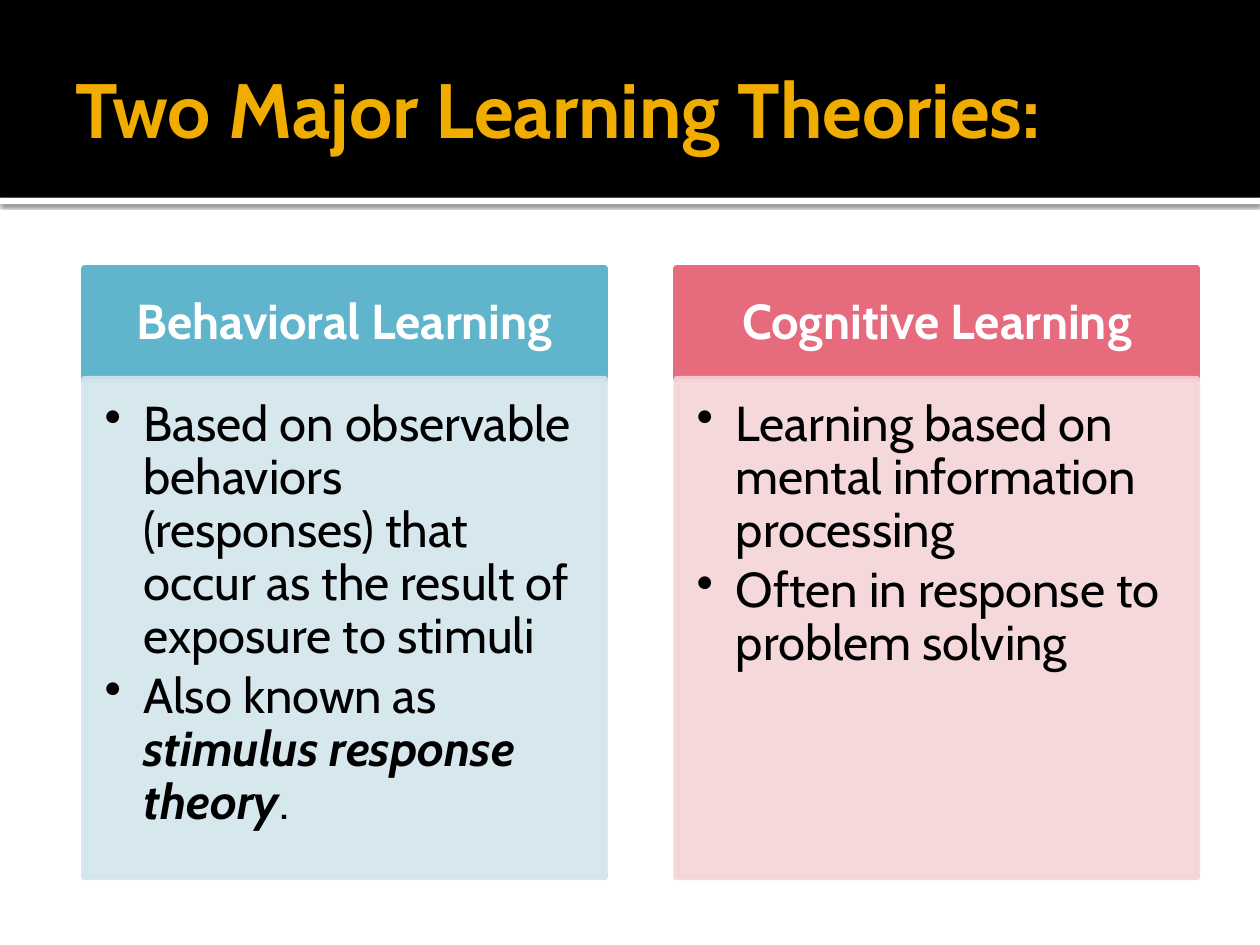
from lxml.etree import SubElement as Sub
from pptx import Presentation
from pptx.dml.color import RGBColor as RGB
from pptx.enum.shapes import MSO_SHAPE as Kind
from pptx.enum.text import MSO_ANCHOR as Anchor, PP_ALIGN as Align
from pptx.oxml.ns import qn
from pptx.util import Inches, Pt

HEAD = "Two Major Learning Theories:"
CARDS = [
    ("Behavioral Learning", "60B5CC", "D2E5EC", [
        [("Based on observable behaviors (responses) that occur as "
          "the result of exposure to stimuli", False)],
        [("Also known as ", False), ("stimulus response theory", True), (".", False)],
    ]),
    ("Cognitive Learning", "E66C7D", "F5D4D7", [
        [("Learning based on mental information processing", False)],
        [("Often in response to problem solving", False)],
    ]),
]
THEME = dict(font="Cabin", title="F0AD00", band="000000", rule="FFFFFF",
             label="FFFFFF", text="000000", big=44, body=28, edge=3.78)
LEFT, TOP, WIDE, STEP = 0.67, 2.13, 4.13, 4.7
CAP, BODY = 0.88, 3.95
INDENT = 0.31


def fade(fill, alpha):
    for tone in fill.iter(qn("a:srgbClr")):
        Sub(tone, qn("a:alpha"), val=str(alpha * 1000))


def box(slide, x, y, w, h, color, edge=0, alpha=100):
    shape = slide.shapes.add_shape(
        Kind.RECTANGLE, Inches(x), Inches(y), Inches(w), Inches(h))
    shape.shadow.inherit = False
    shape.fill.solid()
    shape.fill.fore_color.rgb = RGB.from_string(color)
    if edge:
        shape.line.color.rgb = RGB.from_string(color)
        shape.line.width = Pt(edge)
    else:
        shape.line.fill.background()
    if alpha < 100:
        fade(shape._element.spPr, alpha)
    return shape


def write(shape, paras, size, color, pad, bold=False, align=Align.LEFT,
          anchor=Anchor.MIDDLE, space=1, after=0, bullet=False):
    frame = shape.text_frame
    frame.word_wrap = True
    frame.vertical_anchor = anchor
    (frame.margin_left, frame.margin_top,
     frame.margin_right, frame.margin_bottom) = map(Inches, pad)
    for i, runs in enumerate(paras):
        para = frame.paragraphs[0] if i == 0 else frame.add_paragraph()
        para.alignment = align
        para.line_spacing = space
        para.space_after = Pt(after)
        if bullet:
            props = para._p.get_or_add_pPr()
            props.set("marL", str(Inches(INDENT)))
            props.set("indent", str(-Inches(INDENT)))
            Sub(props, qn("a:buChar"), char="•")
        for text, strong in runs:
            run = para.add_run()
            run.text = text
            font = run.font
            font.name = THEME["font"]
            font.size = Pt(size)
            font.bold = bold or strong
            font.italic = strong
            font.color.rgb = RGB.from_string(color)


def banner(slide):
    rule = box(slide, 0, 1.57, 10, 0.05, THEME["rule"])
    glow = Sub(rule._element.spPr.find(qn("a:effectLst")), qn("a:outerShdw"),
               blurRad=str(Pt(2.5)), dist=str(Pt(0.8)), dir="5400000",
               algn="t", rotWithShape="0")
    Sub(glow, qn("a:srgbClr"), val="000000")
    fade(glow, 60)
    box(slide, 0, 0, 10, 1.57, THEME["band"])
    title = slide.shapes.title
    title.left, title.top = Inches(0.5), Inches(0.17)
    title.width, title.height = Inches(9), Inches(1.37)
    write(title, [[(HEAD, False)]], THEME["big"], THEME["title"],
          (0.1, 0.05, 0.05, 0.05), bold=True)
    slide.shapes._spTree.append(title._element)


def card(slide, x, name, dark, light, points):
    cap = box(slide, x, TOP, WIDE, CAP, dark, THEME["edge"])
    write(cap, [[(name, False)]], THEME["body"], THEME["label"],
          (0.22, 0.12, 0.22, 0.12), bold=True, align=Align.CENTER, space=0.9)
    body = box(slide, x, TOP + CAP, WIDE, BODY, light, THEME["edge"], 90)
    write(body, points, THEME["body"], THEME["text"],
          (0.16, 0.16, 0.22, 0.24), anchor=Anchor.TOP,
          space=0.9, after=0.15 * THEME["body"], bullet=True)


def main():
    deck = Presentation()
    deck.slide_width, deck.slide_height = Inches(10), Inches(7.5)
    slide = deck.slides.add_slide(deck.slide_layouts[5])
    banner(slide)
    for i, item in enumerate(CARDS):
        card(slide, LEFT + i * STEP, *item)
    deck.save("out.pptx")


if __name__ == "__main__":
    main()
